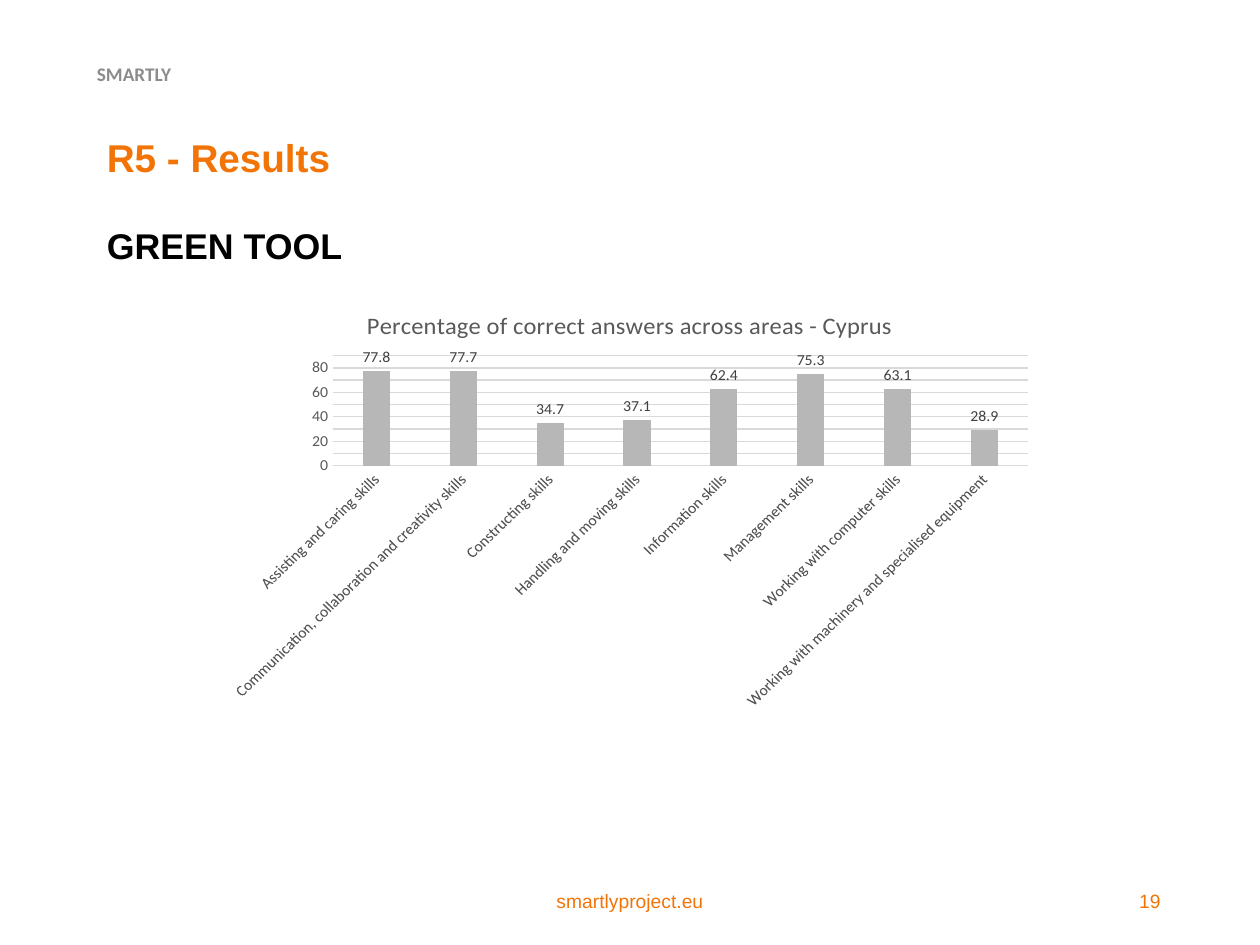
from pptx import Presentation
from pptx.chart.data import CategoryChartData
from pptx.dml.color import RGBColor
from pptx.enum import chart as ch, text
from pptx.util import Pt

COLORS = {"orange": "F37406", "black": "000000", "header": "8C8C8C", "bar": "B7B7B7",
          "axis": "595959", "label": "404040", "grid": "D9D9D9"}
LEFT, CENTER, RIGHT = text.PP_ALIGN.LEFT, text.PP_ALIGN.CENTER, text.PP_ALIGN.RIGHT

# text, (left, top, width, height), size, font, colour, bold, alignment
LABELS = [
    ("SMARTLY", (48.24, 28.08, 162, 28.8), 11, "Calibri", "header", True, LEFT),
    ("smartlyproject.eu", (238.32, 500.4, 243.36, 28.8), 11, "Arial", "orange", False, CENTER),
    ("19", (508.32, 500.4, 162, 28.8), 11, "Arial", "orange", False, RIGHT),
]
HEADINGS = [("R5 - Results", 22.1, "orange"), ("GREEN TOOL", 20.4, "black")]
HEADINGS_BOX = (54, 82.08, 612, 74.16)
HEADINGS_GAP = 32.4

CHART_BOX = (123.12, 165.6, 473.76, 239.76)
CHART_TITLE = "Percentage of correct answers across areas - Cyprus"
RESULTS = [
    ("Assisting and caring skills", 77.8),
    ("Communication, collaboration and creativity skills", 77.7),
    ("Constructing skills", 34.7),
    ("Handling and moving skills", 37.1),
    ("Information skills", 62.4),
    ("Management skills", 75.3),
    ("Working with computer skills", 63.1),
    ("Working with machinery and specialised equipment", 28.9),
]


def color(name):
    return RGBColor.from_string(COLORS[name])


def style(font, size, face, name, bold=False):
    font.size, font.name, font.bold = Pt(size), face, bold
    font.color.rgb = color(name)


def add_text_frame(slide, box, anchor):
    tf = slide.shapes.add_textbox(*map(Pt, box)).text_frame
    tf.word_wrap = True
    tf.vertical_anchor = anchor
    return tf


def add_label(slide, words, box, size, face, name, bold, align):
    p = add_text_frame(slide, box, text.MSO_ANCHOR.MIDDLE).paragraphs[0]
    p.text, p.alignment = words, align
    style(p.runs[0].font, size, face, name, bold)


def add_headings(slide):
    tf = add_text_frame(slide, HEADINGS_BOX, text.MSO_ANCHOR.TOP)
    tf.margin_top = Pt(1.5)
    for i, (words, size, name) in enumerate(HEADINGS):
        p = tf.add_paragraph() if i else tf.paragraphs[0]
        p.text, p.line_spacing = words, 0.7
        if i:
            p.space_before = Pt(HEADINGS_GAP)
        style(p.runs[0].font, size, "Arial", name, True)


def add_results_chart(slide):
    data = CategoryChartData()
    data.categories = [area for area, _ in RESULTS]
    data.add_series("Series 1", [value for _, value in RESULTS])
    chart = slide.shapes.add_chart(
        ch.XL_CHART_TYPE.COLUMN_CLUSTERED, *map(Pt, CHART_BOX), data).chart
    style(chart.font, 10, "Calibri", "black")
    chart.has_legend = False
    title = chart.chart_title
    title.include_in_layout = False
    title.text_frame.text = CHART_TITLE
    style(title.text_frame.paragraphs[0].runs[0].font, 14, "Calibri", "axis")

    for axis in (chart.category_axis, chart.value_axis):
        axis.major_tick_mark = axis.minor_tick_mark = ch.XL_TICK_MARK.NONE
        style(axis.tick_labels.font, 9, "Calibri", "axis")
    values = chart.value_axis
    values.minimum_scale, values.maximum_scale, values.major_unit = 0, 90, 10
    values.format.line.fill.background()
    for line in (chart.category_axis.format.line, values.major_gridlines.format.line):
        line.color.rgb = color("grid")
        line.width = Pt(0.75)

    plot = chart.plots[0]
    plot.gap_width, plot.overlap, plot.vary_by_categories = 219, -27, False
    fill = plot.series[0].format.fill
    fill.solid()
    fill.fore_color.rgb = color("bar")
    plot.has_data_labels = True
    labels = plot.data_labels
    labels.show_value = True
    labels.position = ch.XL_LABEL_POSITION.OUTSIDE_END
    style(labels.font, 9, "Calibri", "label")


def main():
    prs = Presentation()
    prs.slide_width, prs.slide_height = Pt(720), Pt(540)
    slide = prs.slides.add_slide(prs.slide_layouts[6])
    for label in LABELS:
        add_label(slide, *label)
    add_headings(slide)
    add_results_chart(slide)
    prs.save("out.pptx")


if __name__ == "__main__":
    main()
